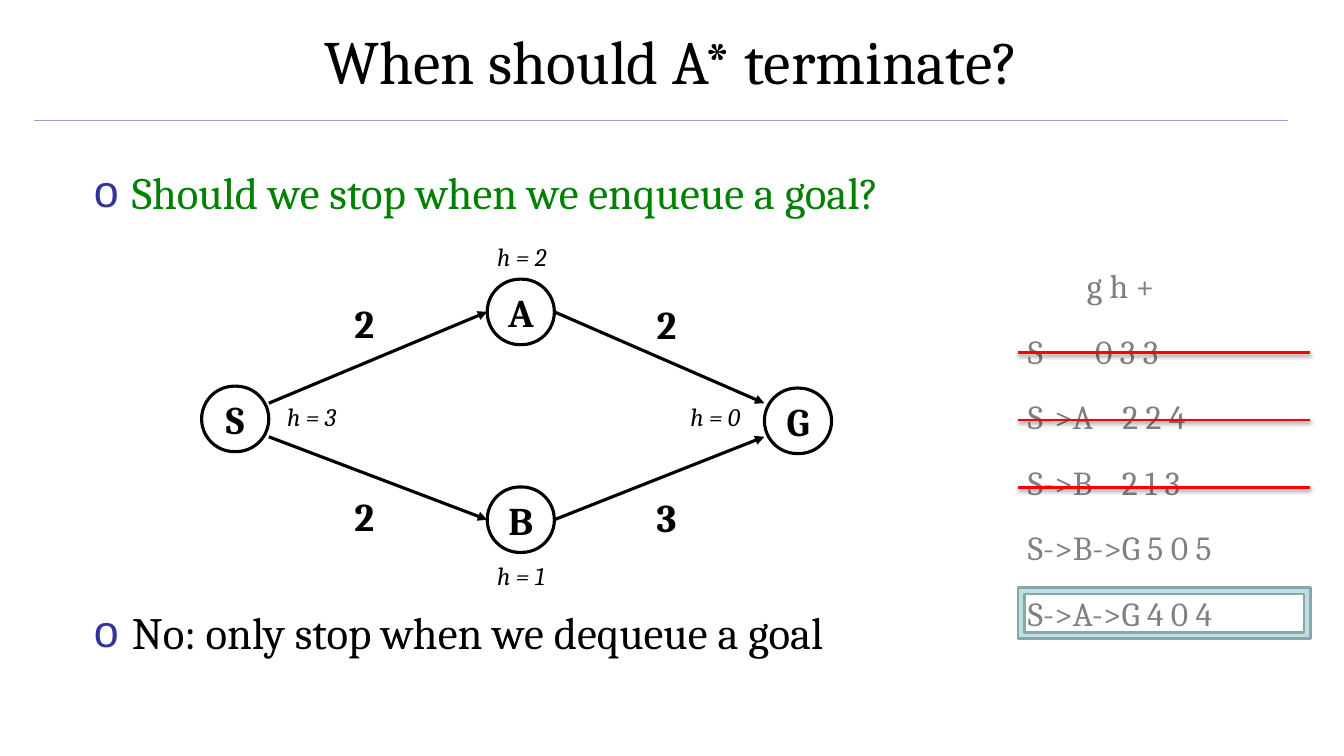
from lxml import etree
from pptx import Presentation
from pptx.dml.color import RGBColor
from pptx.enum.shapes import MSO_CONNECTOR, MSO_SHAPE
from pptx.enum.text import MSO_ANCHOR, MSO_AUTO_SIZE, PP_ALIGN
from pptx.oxml.ns import qn
from pptx.util import Pt

STRAIGHT = MSO_CONNECTOR.STRAIGHT
ROUNDED, FRAME = MSO_SHAPE.ROUNDED_RECTANGLE, MSO_SHAPE.FRAME
MIDDLE, CENTER = MSO_ANCHOR.MIDDLE, PP_ALIGN.CENTER
FIT_SHAPE, NO_FIT = MSO_AUTO_SIZE.SHAPE_TO_FIT_TEXT, MSO_AUTO_SIZE.NONE
LEFT_SIDE, RIGHT_SIDE = 1, 3

BLACK = RGBColor(0x00, 0x00, 0x00)
GREEN = RGBColor(0x00, 0x80, 0x00)
GRAY = RGBColor(0x80, 0x80, 0x80)
RED = RGBColor(0xFF, 0x00, 0x00)
RULE_BLUE = RGBColor(0x9C, 0x9C, 0xDF)
BULLET_BLUE = RGBColor(0x33, 0x33, 0x99)
TEAL = RGBColor(0xBB, 0xE0, 0xE3)
DARK_TEAL = RGBColor(0x8A, 0xA6, 0xA8)

# Content
TITLE = "When should A* terminate?"
BULLETS = [  # text, colour, space before
    ("Should we stop when we enqueue a goal?", GREEN, 0),
    ("No: only stop when we dequeue a goal", BLACK, 276),
]
NODES = {"S": (144, 275.8), "B": (348, 347.8), "A": (348, 199.4), "G": (546, 277.2)}
EDGES = [  # from, to, free end at S or G
    ("S", "A", (192, 288)),
    ("S", "B", (192, 312)),
    ("A", "G", (546, 288)),
    ("B", "G", (546, 312)),
]
COSTS = [("2", 246, 210), ("2", 462, 211), ("2", 246, 348), ("3", 462, 349)]
HEURISTICS = [("h = 2", 348, 169), ("h = 3", 198, 283),
              ("h = 0", 486, 283), ("h = 1", 348, 396.7)]
FRINGE = [  # path, g h sum, tab stop of the numbers
    ("", "g h +", 42),
    ("S", "0 3 3", 48),
    ("S->A", "2 2 4", 67.5),
    ("S->B", "2 1 3", 67),
    ("S->B->G 5 0 5", "", 0),
    ("S->A->G 4 0 4", "", 0),
]

# Formats
TITLE_FONT = {"size": Pt(44), "bold": False}
BULLET_FONT = {"size": Pt(32)}
GRAPH_FONT = {"size": Pt(28), "bold": True}
HEURISTIC_FONT = {"size": Pt(18), "italic": True}
FRINGE_FONT = {"size": Pt(24)}

# Layout
NODE_W, NODE_H = 48, 46.8
FRINGE_X, FRINGE_Y, FRINGE_W, FRINGE_H, FRINGE_STEP = 727.2, 185.8, 208.8, 36.4, 46.8
STRIKE_Y, STRIKE_STEP, STRIKES = 252, 48, 3


def add_xml(parent, tag, **attributes):
    return etree.SubElement(parent, qn(tag), attributes)


def write(paragraph, text, style, color=BLACK):
    font = paragraph.add_run().font
    paragraph.runs[0].text = text
    font.name = "Cambria"
    font.color.rgb = color
    for name, value in style.items():
        setattr(font, name, value)


def add_box(left, top, width, height):
    frame = slide.shapes.add_textbox(Pt(left), Pt(top), Pt(width), Pt(height)).text_frame
    frame.word_wrap = True
    return frame


def add_label(text, left, top, width, height, style):
    frame = add_box(left, top, width, height)
    frame.auto_size = FIT_SHAPE
    write(frame.paragraphs[0], text, style)


def add_line(start, end, color, width):
    line = slide.shapes.add_connector(STRAIGHT, *(Pt(v) for v in (*start, *end)))
    line.line.color.rgb = color
    line.line.width = Pt(width)
    effects = add_xml(line._element.spPr, "a:effectLst")
    return line, effects


deck = Presentation()
deck.slide_width, deck.slide_height = Pt(960), Pt(540)
slide = deck.slides.add_slide(deck.slide_layouts[5])

# Title and rule
title = slide.shapes.title
title.left, title.top, title.width, title.height = Pt(0), Pt(-2), Pt(960), Pt(90)
title.text_frame.auto_size = NO_FIT
title.text_frame.vertical_anchor = MIDDLE
title.text_frame.paragraphs[0].alignment = CENTER
write(title.text_frame.paragraphs[0], TITLE, TITLE_FONT)
add_line((24, 86), (920, 86), RULE_BLUE, 1)

# Question and answer
body = add_box(60, 114, 660, 323)
for i, (text, color, gap) in enumerate(BULLETS):
    paragraph = body.add_paragraph() if i else body.paragraphs[0]
    paragraph.space_before = Pt(gap)
    properties = paragraph._p.get_or_add_pPr()
    properties.set("marL", str(Pt(27)))
    properties.set("indent", str(Pt(-27)))
    bullet_color = add_xml(properties, "a:buClr")
    add_xml(bullet_color, "a:srgbClr", val=str(BULLET_BLUE))
    add_xml(properties, "a:buFont", typeface="Arial")
    add_xml(properties, "a:buChar", char="o")
    write(paragraph, text, BULLET_FONT, color)

# Graph nodes
circles = {}
for name, (left, top) in NODES.items():
    circle = slide.shapes.add_shape(ROUNDED, Pt(left), Pt(top), Pt(NODE_W), Pt(NODE_H))
    circle.adjustments[0] = 0.5
    circle.shadow.inherit = False
    circle.fill.background()
    circle.line.color.rgb = BLACK
    circle.line.width = Pt(2.25)
    circle.text_frame.word_wrap = False
    circle.text_frame.vertical_anchor = MIDDLE
    circle.text_frame.paragraphs[0].alignment = CENTER
    write(circle.text_frame.paragraphs[0], name, GRAPH_FONT)
    circles[name] = circle

# Graph edges, joined to A and B
for source, target, free_end in EDGES:
    edge, _ = add_line(free_end, free_end, BLACK, 2.25)
    if source == "S":
        edge.end_connect(circles[target], LEFT_SIDE)
    else:
        edge.begin_connect(circles[source], RIGHT_SIDE)
    add_xml(edge.line._get_or_add_ln(), "a:tailEnd", type="triangle")

# Edge costs and heuristics
for text, left, top in COSTS:
    add_label(text, left, top, 36, 41, GRAPH_FONT)
for text, left, top in HEURISTICS:
    add_label(text, left, top, 72, 29, HEURISTIC_FONT)

# Fringe table
for i, (route, values, stop) in enumerate(FRINGE):
    frame = add_box(FRINGE_X, FRINGE_Y + i * FRINGE_STEP, FRINGE_W, FRINGE_H)
    frame.auto_size = FIT_SHAPE
    paragraph = frame.paragraphs[0]
    if stop:
        tabs = add_xml(paragraph._p.get_or_add_pPr(), "a:tabLst")
        add_xml(tabs, "a:tab", pos=str(Pt(stop)), algn="l")
    write(paragraph, f"{route}\t{values}" if values else route, FRINGE_FONT, GRAY)

# Strikes through the expanded paths
for i in range(STRIKES):
    y = STRIKE_Y + i * STRIKE_STEP
    _, effects = add_line((FRINGE_X, y), (FRINGE_X + FRINGE_W, y), RED, 2)
    shadow = add_xml(effects, "a:outerShdw", blurRad=str(Pt(3.1)), dist=str(Pt(1.6)),
                     dir="5400000", rotWithShape="0")
    shadow_color = add_xml(shadow, "a:srgbClr", val=str(BLACK))
    add_xml(shadow_color, "a:alpha", val="38000")

# Highlight on the chosen path
last_top = FRINGE_Y + (len(FRINGE) - 1) * FRINGE_STEP
highlight = slide.shapes.add_shape(FRAME, Pt(FRINGE_X), Pt(last_top), Pt(FRINGE_W), Pt(FRINGE_H))
highlight.shadow.inherit = False
highlight.fill.solid()
highlight.fill.fore_color.rgb = TEAL
highlight.line.color.rgb = DARK_TEAL
highlight.line.width = Pt(2)

deck.save("out.pptx")
